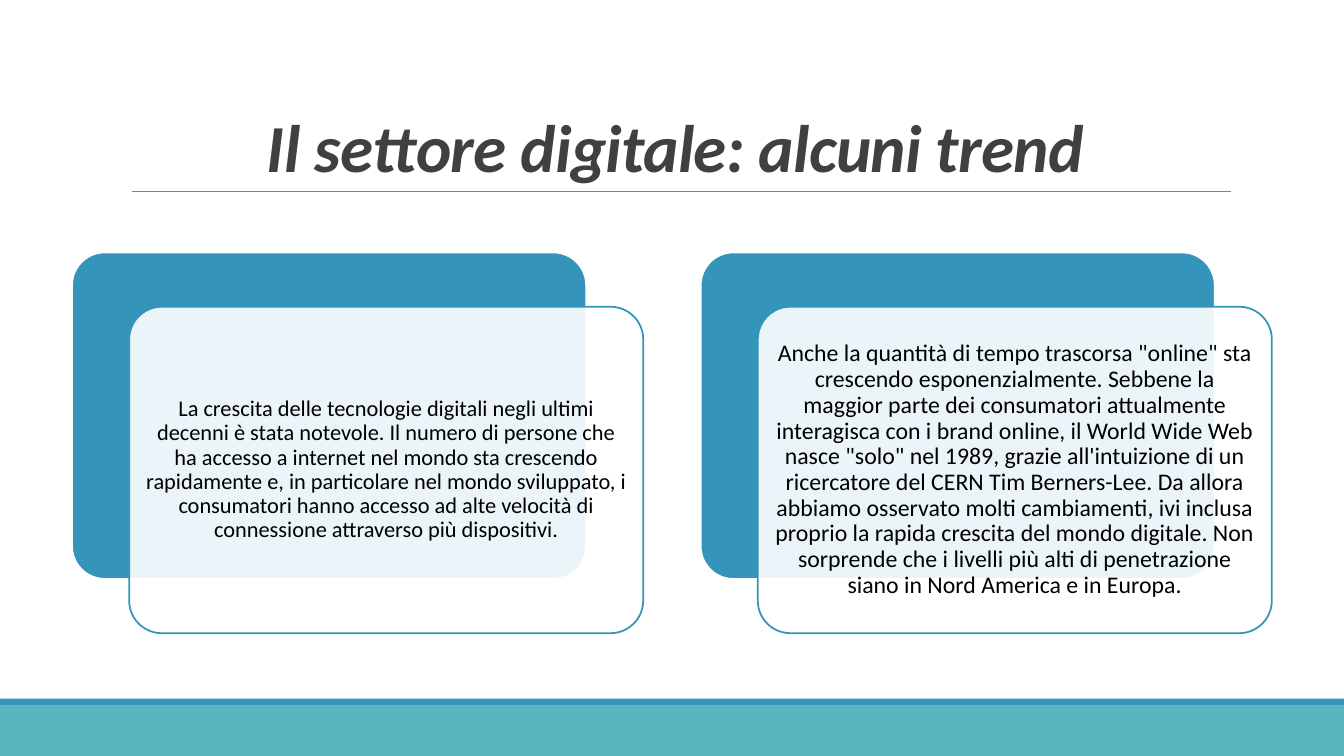
from dataclasses import dataclass

from lxml import etree
from pptx import Presentation
from pptx.dml.color import RGBColor
from pptx.enum.shapes import MSO_CONNECTOR, MSO_SHAPE
from pptx.enum.text import MSO_ANCHOR, MSO_AUTO_SIZE, PP_ALIGN
from pptx.oxml.ns import qn
from pptx.shapes.autoshape import Shape
from pptx.slide import Slide
from pptx.text.text import TextFrame
from pptx.util import Pt

RECT = MSO_SHAPE.RECTANGLE
ROUND = MSO_SHAPE.ROUNDED_RECTANGLE
LINE = MSO_CONNECTOR.STRAIGHT
CENTER = PP_ALIGN.CENTER
MIDDLE, BOTTOM = MSO_ANCHOR.MIDDLE, MSO_ANCHOR.BOTTOM
NO_FIT = MSO_AUTO_SIZE.NONE
TITLE_ONLY = 5


@dataclass(frozen=True)
class Theme:
    font: str = "Calibri"
    blue: RGBColor = RGBColor(0x34, 0x94, 0xBA)
    teal: RGBColor = RGBColor(0x58, 0xB6, 0xC0)
    white: RGBColor = RGBColor(0xFF, 0xFF, 0xFF)
    black: RGBColor = RGBColor(0, 0, 0)
    dark: RGBColor = RGBColor(0x40, 0x40, 0x40)
    gray: RGBColor = RGBColor(0x80, 0x80, 0x80)
    title_size: float = 48
    edge: float = 1.25
    rule: float = 0.5


@dataclass(frozen=True)
class Box:
    left: float
    top: float
    width: float
    height: float


@dataclass(frozen=True)
class Card:
    text: str
    size: float


THEME = Theme()
WIDTH, HEIGHT = 960, 540
TITLE_BOX = Box(86.4, 22.3, 792, 114.5)
BANDS = [
    (Box(0, 504, WIDTH, 36), THEME.teal),
    (Box(0, 499, WIDTH, 5), THEME.blue),
]

CARD_LEFT, CARD_TOP = 51.5, 180.3
CARD_WIDTH, CARD_HEIGHT = 367.2, 233.2
CARD_STEP = 449
SHIFT_X, SHIFT_Y = 40.8, 38.8
CARDS = [
    Card(
        "La crescita delle tecnologie digitali negli ultimi decenni è stata "
        "notevole. Il numero di persone che ha accesso a internet nel mondo "
        "sta crescendo rapidamente e, in particolare nel mondo sviluppato, i "
        "consumatori hanno accesso ad alte velocità di connessione "
        "attraverso più dispositivi.",
        16,
    ),
    Card(
        'Anche la quantità di tempo trascorsa "online" sta crescendo '
        "esponenzialmente. Sebbene la maggior parte dei consumatori "
        "attualmente interagisca con i brand online, il World Wide Web nasce "
        "\"solo\" nel 1989, grazie all'intuizione di un ricercatore del CERN "
        "Tim Berners-Lee. Da allora abbiamo osservato molti cambiamenti, ivi "
        "inclusa proprio la rapida crescita del mondo digitale. Non sorprende "
        "che i livelli più alti di penetrazione siano in Nord America e in "
        "Europa.",
        17,
    ),
]


def write(frame: TextFrame, text: str, size: float, color: RGBColor,
          spacing: float, anchor: MSO_ANCHOR) -> None:
    """Fill the frame with one centred paragraph."""
    frame.text = text
    frame.word_wrap = True
    frame.auto_size = NO_FIT
    frame.vertical_anchor = anchor
    para = frame.paragraphs[0]
    para.alignment = CENTER
    para.line_spacing = spacing
    font = para.runs[0].font
    font.name = THEME.font
    font.size = Pt(size)
    font.color.rgb = color


def add_box(slide: Slide, kind: MSO_SHAPE, box: Box, fill: RGBColor) -> Shape:
    """Add a filled shape without outline or shadow."""
    shape = slide.shapes.add_shape(
        kind, Pt(box.left), Pt(box.top), Pt(box.width), Pt(box.height))
    shape.shadow.inherit = False
    shape.fill.solid()
    shape.fill.fore_color.rgb = fill
    shape.line.fill.background()
    return shape


def add_panel(slide: Slide, box: Box, fill: RGBColor, edge: RGBColor) -> Shape:
    """Add a rounded, outlined box."""
    panel = add_box(slide, ROUND, box, fill)
    panel.adjustments[0] = 0.1
    panel.line.color.rgb = edge
    panel.line.width = Pt(THEME.edge)
    return panel


def add_card(slide: Slide, card: Card, left: float) -> None:
    back = Box(left, CARD_TOP, CARD_WIDTH, CARD_HEIGHT)
    front = Box(left + SHIFT_X, CARD_TOP + SHIFT_Y, CARD_WIDTH, CARD_HEIGHT)
    add_panel(slide, back, THEME.blue, THEME.white)
    panel = add_panel(slide, front, THEME.white, THEME.blue)
    color = panel.fill._xPr.find(qn("a:solidFill"))[0]
    etree.SubElement(color, qn("a:alpha")).set("val", "90000")
    frame = panel.text_frame
    frame.margin_left = frame.margin_right = Pt(5)
    frame.margin_top = frame.margin_bottom = Pt(5)
    write(frame, card.text, card.size, THEME.black, 0.9, MIDDLE)


def add_rule(slide: Slide) -> None:
    rule = slide.shapes.add_connector(
        LINE, Pt(94.3), Pt(136.8), Pt(879.1), Pt(136.8))
    rule.line.color.rgb = THEME.gray
    rule.line.width = Pt(THEME.rule)
    etree.SubElement(rule.line._get_or_add_ln().getparent(),
                     qn("a:effectLst"))


def set_title(slide: Slide, text: str) -> None:
    title = slide.shapes.title
    title.left, title.top = Pt(TITLE_BOX.left), Pt(TITLE_BOX.top)
    title.width, title.height = Pt(TITLE_BOX.width), Pt(TITLE_BOX.height)
    write(title.text_frame, text, THEME.title_size, THEME.dark, 0.85, BOTTOM)
    run = title.text_frame.paragraphs[0].runs[0]
    run.font.bold = run.font.italic = True
    run._r.get_or_add_rPr().set("spc", "-50")


def main() -> None:
    deck = Presentation()
    deck.slide_width, deck.slide_height = Pt(WIDTH), Pt(HEIGHT)
    slide = deck.slides.add_slide(deck.slide_layouts[TITLE_ONLY])
    for box, fill in BANDS:
        add_box(slide, RECT, box, fill)
    add_rule(slide)
    set_title(slide, "Il settore digitale: alcuni trend")
    for index, card in enumerate(CARDS):
        add_card(slide, card, CARD_LEFT + index * CARD_STEP)
    deck.save("out.pptx")


if __name__ == "__main__":
    main()
